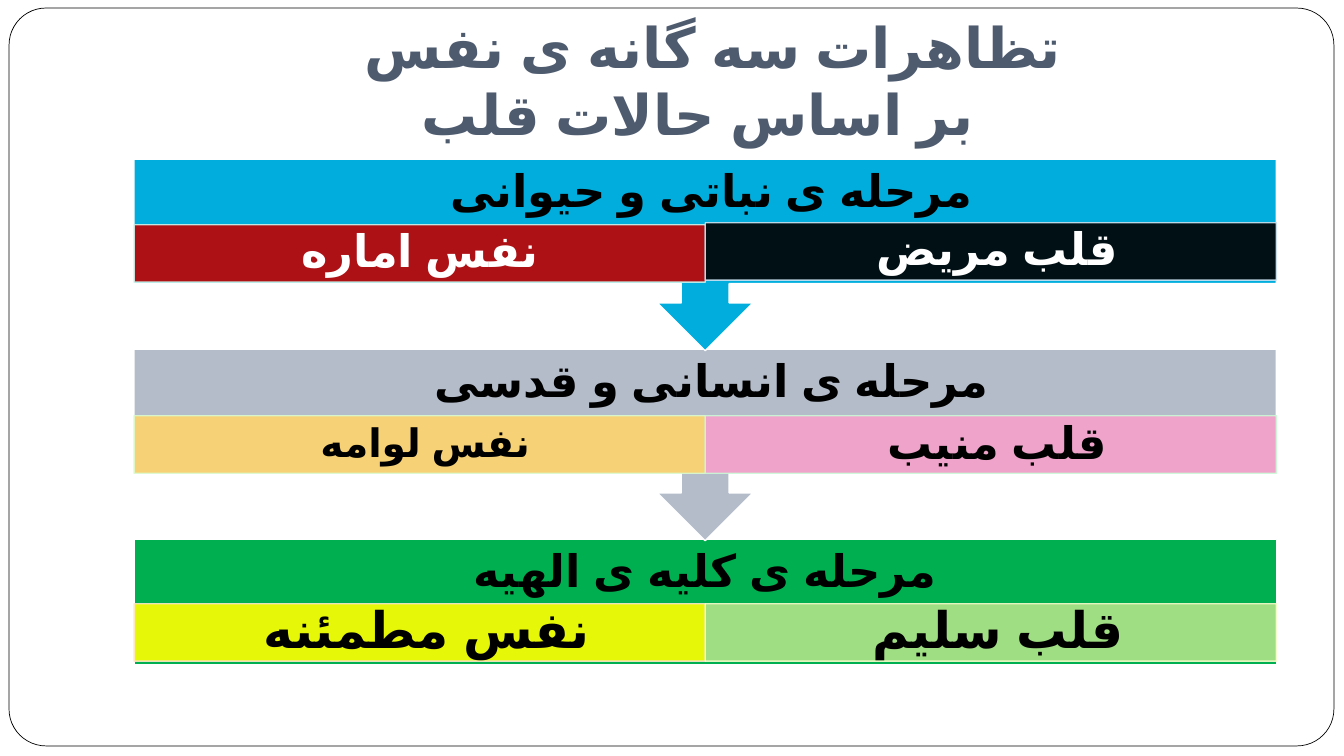
from pptx import Presentation
from pptx.dml.color import RGBColor
from pptx.enum import shapes, text
from pptx.oxml import ns
from pptx.util import Inches, Pt
from lxml import etree

BLACK = RGBColor(0, 0, 0)
WHITE = RGBColor(255, 255, 255)
SLATE = RGBColor(0x4E, 0x5B, 0x6F)
TITLE = "تظاهرات سه گانه ی نفس \vبر اساس حالات قلب "

# Each cell: text, size, text colour, fill, line, drop below the stage top
STAGES = [
    {"text": "مرحله ی نباتی و حیوانی ", "fill": RGBColor(0x00, 0xAD, 0xDC), "cells": [
        ("نفس اماره", 32, WHITE, RGBColor(0xC0, 0, 0), RGBColor(0xCC, 0xF5, 0xED), 0.65),
        ("قلب مریض ", 32, WHITE, BLACK, RGBColor(0xCC, 0xE3, 0xF2), 0.63)]},
    {"text": "مرحله ی انسانی و قدسی ", "fill": RGBColor(0xB4, 0xBC, 0xCA), "cells": [
        ("نفس لوامه ", 28, BLACK, RGBColor(0xFE, 0xD4, 0x6C), RGBColor(0xDB, 0xFA, 0xCC), 0.66),
        ("قلب منیب ", 32, BLACK, RGBColor(0xF7, 0xA1, 0xCA), RGBColor(0xCB, 0xF8, 0xD6), 0.66)]},
    {"text": "مرحله ی کلیه ی الهیه", "fill": RGBColor(0x00, 0xB0, 0x50), "cells": [
        ("نفس مطمئنه ", 36, BLACK, RGBColor(0xFF, 0xFF, 0), RGBColor(0xFF, 0xE6, 0xCC), 0.64),
        ("قلب سلیم ", 36, BLACK, RGBColor(0xB2, 0xE3, 0x89), RGBColor(0xF8, 0xFC, 0xCC), 0.64)]},
]

LEFT, WIDTH = 1.33, 11.33
FIRST_TOP, PITCH = 1.58, 1.885
CALLOUT_H, LAST_H, HEADING_H, CELL_H = 1.9, 1.24, 0.67, 0.57
CELL_W = WIDTH / 2

prs = Presentation()
prs.slide_width, prs.slide_height = Inches(13.33), Inches(7.5)
s = prs.slides.add_slide(prs.slide_layouts[6])


def add_box(kind, box, fill, line, line_width=1, alpha=None):
    sp = s.shapes.add_shape(kind, *map(Inches, box))
    sp.shadow.inherit = False
    sp.fill.solid()
    sp.fill.fore_color.rgb = fill
    sp.line.color.rgb = line
    sp.line.width = Pt(line_width)
    if alpha:
        for color in sp._element.spPr.iter(ns.qn("a:srgbClr")):
            etree.SubElement(color, ns.qn("a:alpha"), val=str(alpha * 1000))
    return sp


def write(sp, words, size, color, font="Times New Roman", rtl=True,
          anchor=text.MSO_ANCHOR.MIDDLE, insets=(0.25, 0.04, 0.25, 0.04)):
    tf = sp.text_frame
    tf.word_wrap = True
    tf.vertical_anchor = anchor
    for side, inset in zip(("left", "top", "right", "bottom"), insets):
        setattr(tf, "margin_" + side, Inches(inset))
    p = tf.paragraphs[0]
    p.text = words
    p.alignment = text.PP_ALIGN.CENTER
    if rtl:
        p.line_spacing = 0.9
        p._p.get_or_add_pPr().set("rtl", "1")
    for r in p.runs:
        for name, value in {"size": Pt(size), "bold": True, "name": font}.items():
            setattr(r.font, name, value)
        r.font.color.rgb = color
        r.font._element.set("lang", "fa-IR")


frame = add_box(shapes.MSO_SHAPE.ROUNDED_RECTANGLE, (0.09, 0.08, 13.14, 7.32),
                WHITE, BLACK, 0.5)
frame.adjustments[0] = 0.05

title = s.shapes.add_textbox(*map(Inches, (LEFT, 0.11, WIDTH, 1.45)))
write(title, TITLE, 40, SLATE, "Cabin", False, text.MSO_ANCHOR.BOTTOM,
      (0.1, 0.05, 0.1, 0.1))

# Drawn from the bottom up, so each arrow tip lies over the next stage
for row, stage in reversed(list(enumerate(STAGES))):
    top = FIRST_TOP + row * PITCH
    last = row == len(STAGES) - 1
    kind = shapes.MSO_SHAPE.RECTANGLE if last else shapes.MSO_SHAPE.DOWN_ARROW_CALLOUT
    add_box(kind, (LEFT, top, WIDTH, LAST_H if last else CALLOUT_H), stage["fill"], WHITE)
    heading = s.shapes.add_textbox(*map(Inches, (LEFT, top, WIDTH, HEADING_H)))
    write(heading, stage["text"], 32, BLACK, insets=(0.25,) * 4)
    for col, (words, size, color, fill, line, drop) in enumerate(stage["cells"]):
        cell = add_box(shapes.MSO_SHAPE.RECTANGLE,
                       (LEFT + col * CELL_W, top + drop, CELL_W, CELL_H),
                       fill, line, alpha=90)
        write(cell, words, size, color)

prs.save("out.pptx")
